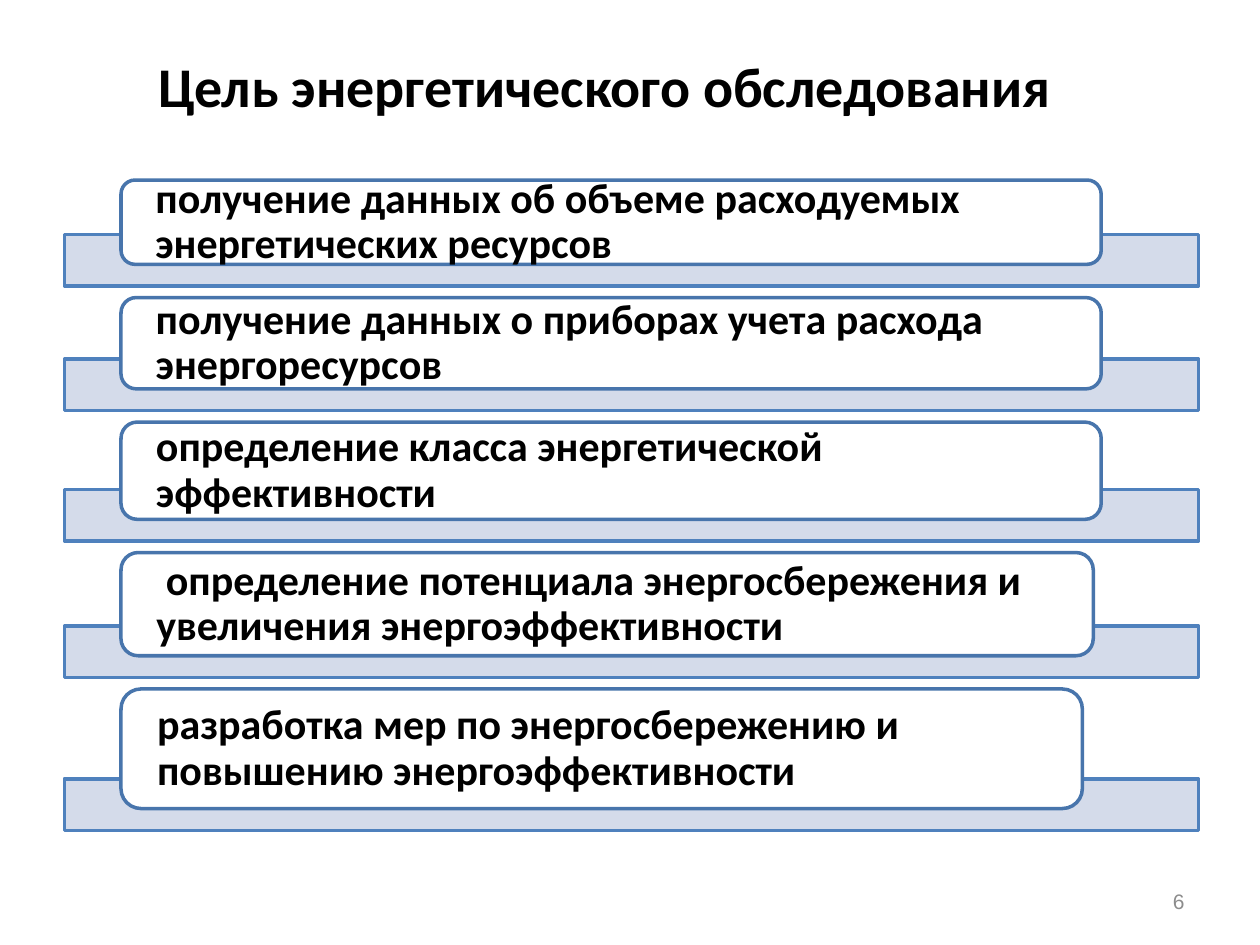
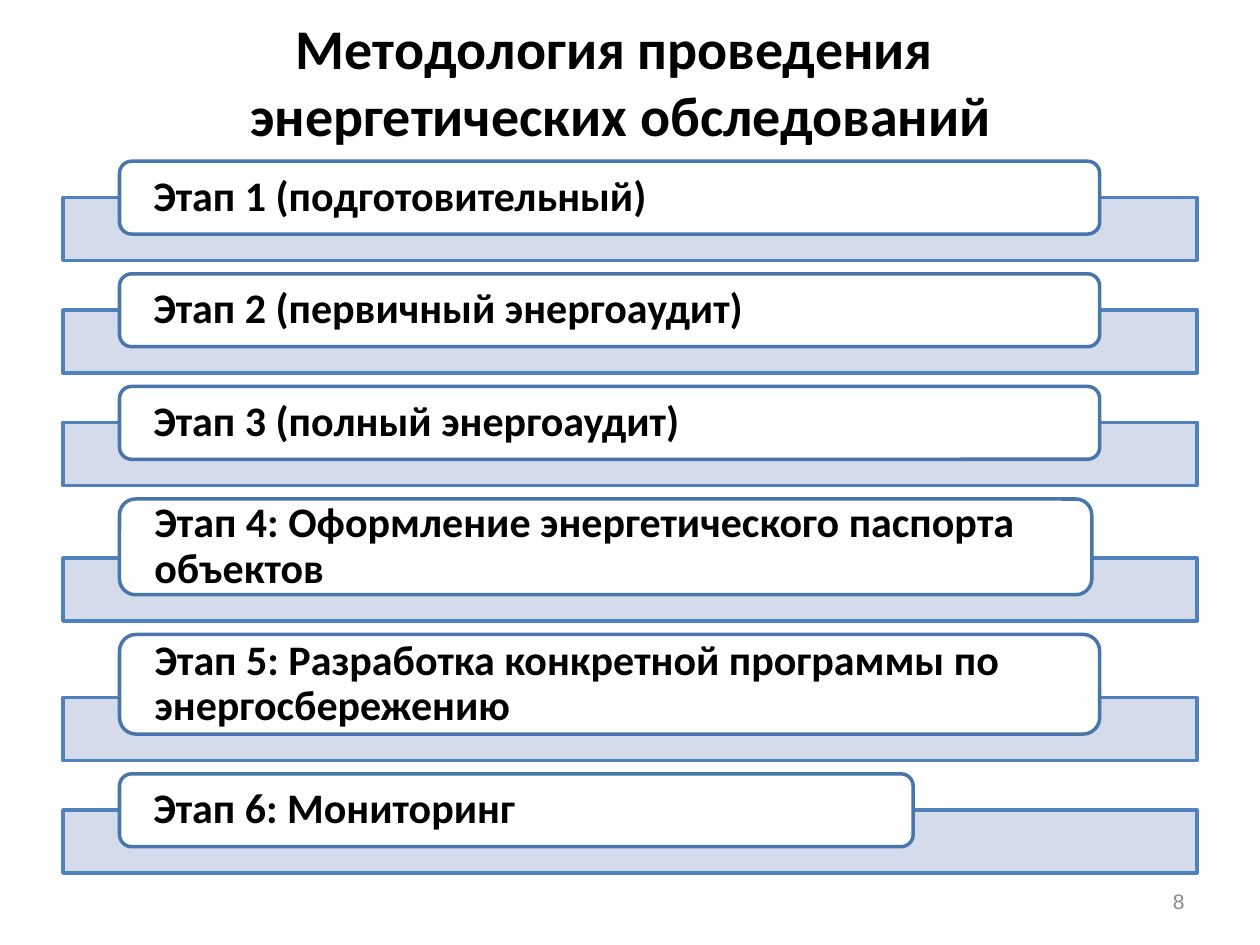
from dataclasses import dataclass

from lxml import etree
from pptx import Presentation
from pptx.dml.color import RGBColor
from pptx.enum.shapes import MSO_SHAPE
from pptx.enum.text import MSO_ANCHOR, MSO_AUTO_SIZE, PP_ALIGN
from pptx.oxml.ns import qn
from pptx.util import Cm, Pt

RECTANGLE = MSO_SHAPE.RECTANGLE
ROUNDED = MSO_SHAPE.ROUNDED_RECTANGLE
MIDDLE = MSO_ANCHOR.MIDDLE
NO_FIT = MSO_AUTO_SIZE.NONE
LEFT, CENTER, RIGHT = PP_ALIGN.LEFT, PP_ALIGN.CENTER, PP_ALIGN.RIGHT
TITLE_ONLY_LAYOUT = 5


@dataclass(frozen=True)
class Theme:
    ink: str = "000000"
    muted: str = "8C8C8C"
    band: str = "D0D8E8"
    band_line: str = "4F81BD"
    label: str = "FFFFFF"
    label_line: str = "4875AC"
    heading_font: str = "Calibri"
    number_font: str = "Arial"
    title_size: int = 32
    label_size: int = 24
    number_size: int = 12
    line_width: float = 2
    band_opacity: int = 90


THEME = Theme()
BAND_WIDTH = 22.86
LABEL_INDENT = 1.14
LABEL_PADDING = 0.61

SLIDES = [
    {
        "title": "Цель энергетического обследования ",
        "title_box": (0.89, 0.91, 22.86, 1.6),
        "number": "6",
        "left": 1.3,
        "top": 3.63,
        "band_height": 1.04,
        "overlap": 0.6,
        "gap": 0.23,
        "labels": [
            ("получение данных об объеме расходуемых энергетических ресурсов", 19.76, 1.7),
            ("получение данных о приборах учета расхода энергоресурсов", 19.76, 1.84),
            ("определение класса энергетической эффективности", 19.76, 1.96),
            (" определение потенциала энергосбережения и увеличения энергоэффективности", 19.6, 2.08),
            ("разработка мер по энергосбережению и повышению энергоэффективности", 19.38, 2.41),
        ],
    },
    {
        "title": "Методология проведения \vэнергетических обследований",
        "title_box": (1.09, 0.33, 22.86, 2.59),
        "number": "8",
        "left": 1.27,
        "top": 3.25,
        "band_height": 1.27,
        "overlap": 0.74,
        "gap": 0.27,
        "labels": [
            ("Этап 1 (подготовительный)", 19.76, 1.47),
            ("Этап 2 (первичный энергоаудит)", 19.76, 1.47),
            ("Этап 3 (полный энергоаудит)", 19.76, 1.47),
            ("Этап 4: Оформление энергетического паспорта объектов", 19.6, 1.93),
            ("Этап 5: Разработка конкретной программы по энергосбережению", 19.76, 2.01),
            ("Этап 6: Мониторинг", 16, 1.47),
        ],
    },
]


def write(box, text, size, color, font, align, bold=False):
    frame = box.text_frame
    frame.text = text
    frame.word_wrap = True
    frame.auto_size = NO_FIT
    frame.vertical_anchor = MIDDLE
    para = frame.paragraphs[0]
    para.alignment = align
    for span in para.runs:
        span.font.size = Pt(size)
        span.font.name = font
        span.font.bold = bold
        span.font.color.rgb = RGBColor.from_string(color)
    return frame


def add_outlined(page, kind, place, fill, line):
    shape = page.shapes.add_shape(kind, *map(Cm, place))
    shape.shadow.inherit = False
    shape.fill.solid()
    shape.fill.fore_color.rgb = RGBColor.from_string(fill)
    shape.line.color.rgb = RGBColor.from_string(line)
    shape.line.width = Pt(THEME.line_width)
    return shape


def add_band(page, place):
    band = add_outlined(page, RECTANGLE, place, THEME.band, THEME.band_line)
    color = band.fill._xPr.find(qn("a:solidFill"))[0]
    etree.SubElement(color, qn("a:alpha")).set("val", str(THEME.band_opacity * 1000))


def add_label(page, text, place):
    label = add_outlined(page, ROUNDED, place, THEME.label, THEME.label_line)
    frame = write(label, text, THEME.label_size, THEME.ink, THEME.heading_font, LEFT, True)
    frame.margin_left = frame.margin_right = Cm(LABEL_PADDING)
    frame.margin_top = frame.margin_bottom = 0
    frame.paragraphs[0].line_spacing = 0.9


def add_title(page, text, place):
    title = page.shapes.title
    title.left, title.top, title.width, title.height = map(Cm, place)
    write(title, text, THEME.title_size, THEME.ink, THEME.heading_font, CENTER, True)


def add_number(page, number):
    box = page.shapes.add_textbox(Cm(18.21), Cm(17.65), Cm(5.92), Cm(1.02))
    write(box, number, THEME.number_size, THEME.muted, THEME.number_font, RIGHT)


def add_list(page, content):
    left, top = content["left"], content["top"]
    for text, width, height in content["labels"]:
        band_top = top + height - content["overlap"]
        add_band(page, (left, band_top, BAND_WIDTH, content["band_height"]))
        add_label(page, text, (left + LABEL_INDENT, top, width, height))
        top = band_top + content["band_height"] + content["gap"]


def main():
    deck = Presentation()
    deck.slide_width, deck.slide_height = Cm(25.4), Cm(19.05)
    for content in SLIDES:
        page = deck.slides.add_slide(deck.slide_layouts[TITLE_ONLY_LAYOUT])
        add_title(page, content["title"], content["title_box"])
        add_number(page, content["number"])
        add_list(page, content)
    deck.save("out.pptx")


if __name__ == "__main__":
    main()
